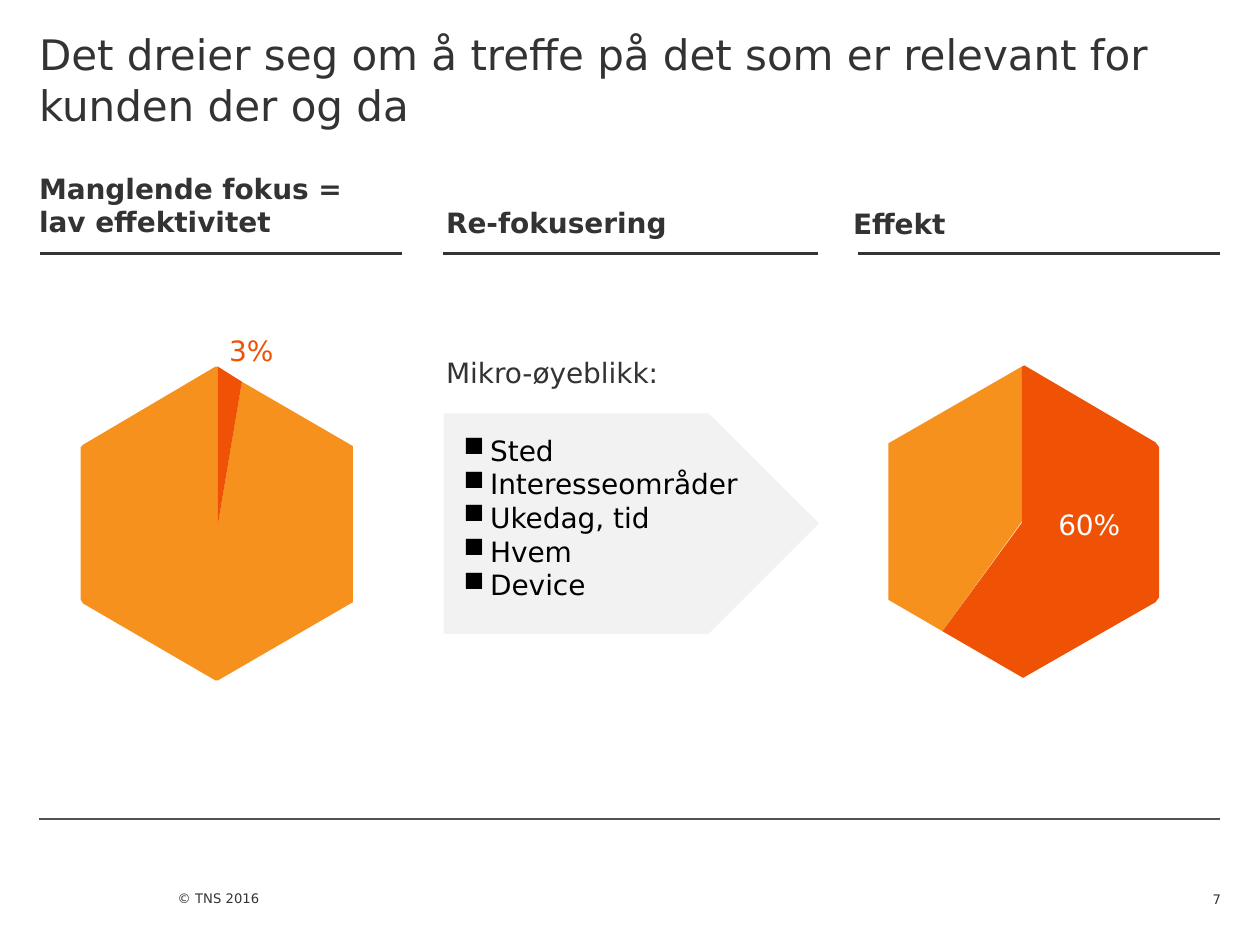
from dataclasses import dataclass

from lxml import etree
from pptx import Presentation
from pptx import util as u
from pptx.dml.color import RGBColor
from pptx.enum import shapes, text
from pptx.oxml import ns


@dataclass(frozen=True)
class Theme:
    font: str = "DejaVu Sans"
    ink: str = "333333"
    rule: str = "525252"
    light: str = "F7911E"
    dark: str = "EF5205"
    panel: str = "F2F2F2"
    black: str = "000000"
    white: str = "FFFFFF"
    head: float = 24
    body: float = 16
    small: float = 7.5


T = Theme()
TOP, LOW = text.MSO_ANCHOR.TOP, text.MSO_ANCHOR.BOTTOM
LEFT, MID, RIGHT = text.PP_ALIGN.LEFT, text.PP_ALIGN.CENTER, text.PP_ALIGN.RIGHT


def apply(item, vals):
    for name, val in vals.items():
        setattr(item, name, val)


def place(shape, box):
    apply(shape, dict(zip(("left", "top", "width", "height"), map(u.Inches, box))))


def write(shape, lines, size=T.body, color=T.ink, bold=False, align=LEFT,
          anchor=TOP, pad=(0, 0, 0, 0), mark=None):
    """Fill a shape with paragraphs, bulleted when a mark is given."""
    frame = shape.text_frame
    frame.text = "\n".join(lines)
    sides = ("margin_left", "margin_top", "margin_right", "margin_bottom")
    apply(frame, dict(zip(sides, map(u.Inches, pad))))
    apply(frame, {"word_wrap": True, "vertical_anchor": anchor,
                  "auto_size": text.MSO_AUTO_SIZE.NONE})
    for para in frame.paragraphs:
        props = para._p.get_or_add_pPr()
        dent = u.Inches(0.21) if mark else 0
        props.set("marL", str(dent))
        props.set("indent", str(-dent))
        kind = "a:buChar" if mark else "a:buNone"
        bullet = etree.SubElement(props, ns.qn(kind))
        if mark:
            bullet.set("char", mark)
        apply(para, {"alignment": align, "space_before": u.Pt(0)})
        for run in para.runs:
            apply(run.font, {"name": T.font, "size": u.Pt(size), "bold": bold})
            run.font.color.rgb = RGBColor.from_string(color)


def label(slide, box, words, **style):
    shape = slide.shapes.add_textbox(*map(u.Inches, box))
    write(shape, [words], **style)


def paint(shape, color):
    shape.shadow.inherit = False
    shape.fill.solid()
    shape.fill.fore_color.rgb = RGBColor.from_string(color)
    shape.line.fill.background()


def rule(slide, left, right, top, color, width):
    ends = map(u.Inches, (left, top, right, top))
    line = slide.shapes.add_connector(shapes.MSO_CONNECTOR.STRAIGHT, *ends)
    line.line.color.rgb = RGBColor.from_string(color)
    line.line.width = u.Pt(width)
    etree.SubElement(line._element.spPr, ns.qn("a:effectLst"))


def slice_(slide, left, top, points, color):
    """Draw one slice from points relative to the hexagon's corner."""
    spots = [(u.Inches(left + x), u.Inches(top + y)) for x, y in points]
    pen = slide.shapes.build_freeform(*spots[0])
    pen.add_line_segments(spots[1:], close=True)
    paint(pen.convert_to_shape(), color)


def column(slide, holder, box, words, ends):
    """Column heading with the rule below it."""
    place(holder, box)
    write(holder, [words], bold=True, pad=(0, 0.23, 0, 0))
    rule(slide, *ends, 2.01, T.ink, 1.5)


def before(slide, left, top):
    """Hexagon with the thin 3% slice."""
    slice_(slide, left, top, [
        (1.09, 0), (1.07, 0), (0.02, 0.62), (0, 0.64), (0, 1.85), (0.02, 1.88),
        (1.07, 2.49), (1.09, 2.49), (2.16, 1.87), (2.16, 0.63), (1.28, 0.12),
        (1.09, 1.25)], T.light)
    slice_(slide, left, top, [(1.09, 0), (1.28, 0.12), (1.09, 1.25)], T.dark)
    label(slide, (left + 0.96, top - 0.26, 0.79, 0.26), "3%",
          color=T.dark, align=MID)


def after(slide, left, top):
    """Hexagon with the 60% slice."""
    slice_(slide, left, top, [
        (0, 1.86), (0.43, 2.11), (1.06, 1.24), (1.06, 0.01), (0, 0.62)], T.light)
    slice_(slide, left, top, [
        (2.15, 0.65), (2.12, 0.61), (1.08, 0), (1.06, 0.01), (1.06, 1.25),
        (0.43, 2.11), (1.07, 2.48), (2.12, 1.88), (2.15, 1.84)], T.dark)
    label(slide, (left + 1.2, top + 1.13, 0.79, 0.26), "60%",
          color=T.white, align=MID)


def moments(slide, holder, box):
    """Arrow panel listing the micro moments, with its caption above."""
    left, top = box[:2]
    arrow = slide.shapes.add_shape(shapes.MSO_SHAPE.PENTAGON, *map(u.Inches, box))
    paint(arrow, T.panel)
    write(arrow, ["Sted", "Interesseområder", "Ukedag, tid", "Hvem", "Device"],
          color=T.black, pad=(0.16, 0.16, 0.07, 0.12), mark="■")
    place(holder, (left + 0.02, top - 0.46, 2.91, 0.16))
    write(holder, ["Mikro-øyeblikk:"])


def footer(slide, left, right):
    rule(slide, left, right, 6.5, T.rule, 0.75)
    label(slide, (1.41, 6.92, 2.78, 0.58), "© TNS 2016", size=T.small,
          anchor=LOW, pad=(0, 0, 0, 0.31))
    label(slide, (9.14, 6.92, 0.55, 0.28), "7", size=T.small,
          anchor=LOW, align=RIGHT)


def main():
    deck = Presentation()
    apply(deck, {"slide_width": u.Inches(10), "slide_height": u.Inches(7.5)})
    # The comparison layout has a title and four text areas
    slide = deck.slides.add_slide(deck.slide_layouts[4])
    title, *heads, note = slide.placeholders

    footer(slide, 0.31, 9.68)
    place(title, (0.31, 0, 9.37, 1.13))
    write(title, ["Det dreier seg om å treffe på det som er relevant for "
                  "kunden der og da"], size=T.head, pad=(0, 0.23, 0, 0))

    # Headings: top, words, ends of the rule
    cols = [(1.13, "Manglende fokus =\vlav effektivitet", (0.32, 3.19)),
            (1.4, "Re-fokusering", (3.52, 6.49)),
            (1.41, "Effekt", (6.81, 9.68))]
    for i, (holder, (top, words, ends)) in enumerate(zip(heads, cols)):
        column(slide, holder, (0.31 + 3.23 * i, top, 2.91, 0.83), words, ends)

    before(slide, 0.64, 2.91)
    moments(slide, note, (3.52, 3.28, 2.98, 1.75))
    after(slide, 7.05, 2.9)
    deck.save("out.pptx")


if __name__ == "__main__":
    main()
